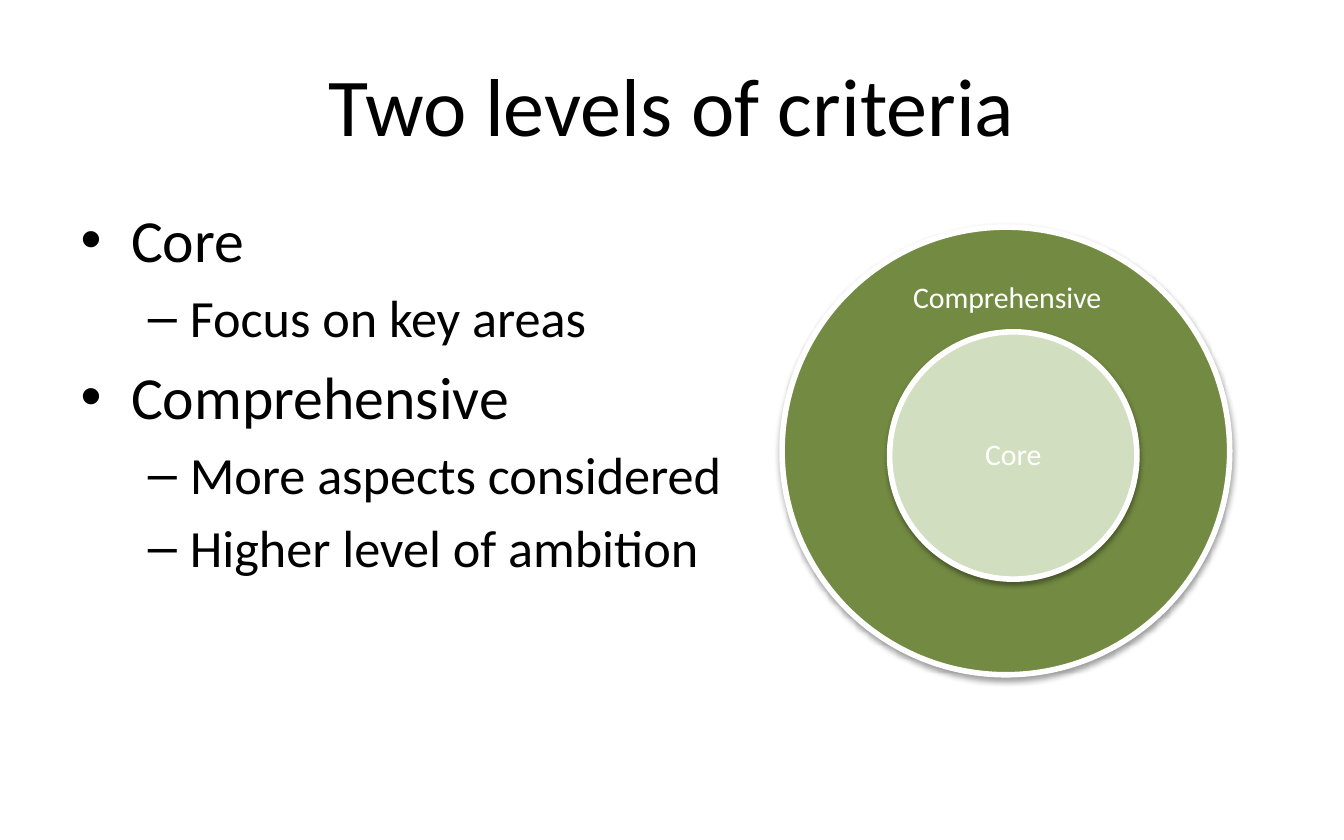
import lxml.etree
import pptx
import pptx.dml.color
import pptx.enum.shapes
import pptx.enum.text
import pptx.oxml.ns
import pptx.util

Pt = pptx.util.Pt
PP_ALIGN = pptx.enum.text.PP_ALIGN
ANCHOR = pptx.enum.text.MSO_ANCHOR
COLORS = {"text": "000000", "outer": "738A42", "inner": "D2DEC0",
          "white": "FFFFFF", "shadow": "000000"}
BULLETS = [(0, "Core"), (1, "Focus on key areas"), (0, "Comprehensive"),
           (1, "More aspects considered"), (1, "Higher level of ambition")]
LEVEL_SIZES = (32, 28)
# Fill, circle (left, top, diameter), label, label box (left, top, width, height)
CIRCLES = [
    ("outer", (419, 121.7, 239.8), "Comprehensive", (476.6, 139.7, 126, 41)),
    ("inner", (476.6, 177.8, 132.5), "Core", (496.1, 211, 93.6, 66.2)),
]


def rgb(name):
    return pptx.dml.color.RGBColor.from_string(COLORS[name])


def set_attrs(obj, values):
    for name, value in values.items():
        setattr(obj, name, value)


def place(sp, left, top, width, height):
    set_attrs(sp, {"left": Pt(left), "top": Pt(top),
                   "width": Pt(width), "height": Pt(height)})


def write(p, text, size, color):
    p.text = text
    set_attrs(p.font, {"name": "Calibri", "size": Pt(size)})
    p.font.color.rgb = rgb(color)


def add_shadow(sp):
    """Give the shape a soft shadow straight below it."""
    sp.shadow.inherit = False
    qn = pptx.oxml.ns.qn
    effects = sp._element.spPr.find(qn("a:effectLst"))
    shadow = lxml.etree.SubElement(
        effects, qn("a:outerShdw"), blurRad=str(Pt(3.1)), dist=str(Pt(1.6)),
        dir="5400000", rotWithShape="0")
    color = lxml.etree.SubElement(shadow, qn("a:srgbClr"), val=COLORS["shadow"])
    lxml.etree.SubElement(color, qn("a:alpha"), val="38000")


def add_circle(s, left, top, diameter, fill):
    sp = s.shapes.add_shape(pptx.enum.shapes.MSO_SHAPE.OVAL, Pt(left), Pt(top),
                            Pt(diameter), Pt(diameter))
    sp.fill.solid()
    sp.fill.fore_color.rgb = rgb(fill)
    sp.line.color.rgb = rgb("white")
    sp.line.width = Pt(3)
    add_shadow(sp)


def add_label(s, text, box):
    tf = s.shapes.add_textbox(*map(Pt, box)).text_frame
    inset = Pt(8.6)
    set_attrs(tf, {"word_wrap": True, "vertical_anchor": ANCHOR.MIDDLE,
                   "margin_left": inset, "margin_right": inset,
                   "margin_top": inset, "margin_bottom": inset})
    p = tf.paragraphs[0]
    write(p, text, 16, "white")
    set_attrs(p, {"alignment": PP_ALIGN.CENTER, "line_spacing": 0.9})


def fill_title(sp, text):
    place(sp, 36, 18, 648, 75)
    sp.text_frame.vertical_anchor = ANCHOR.MIDDLE
    p = sp.text_frame.paragraphs[0]
    write(p, text, 44, "text")
    p.alignment = PP_ALIGN.CENTER


def fill_list(sp, items):
    place(sp, 36, 105, 648, 297)
    tf = sp.text_frame
    tf.auto_size = pptx.enum.text.MSO_AUTO_SIZE.NONE
    for i, (level, text) in enumerate(items):
        p = tf.add_paragraph() if i else tf.paragraphs[0]
        p.level = level
        write(p, text, LEVEL_SIZES[level], "text")
    tf.paragraphs[0].space_before = Pt(0)


def main():
    prs = pptx.Presentation()
    set_attrs(prs, {"slide_width": Pt(720), "slide_height": Pt(450)})
    s = prs.slides.add_slide(prs.slide_layouts[1])
    fill_title(s.shapes.title, "Two levels of criteria")
    fill_list(s.placeholders[1], BULLETS)
    for fill, circle, label, box in CIRCLES:
        add_circle(s, *circle, fill)
        add_label(s, label, box)
    prs.save("out.pptx")


if __name__ == "__main__":
    main()
